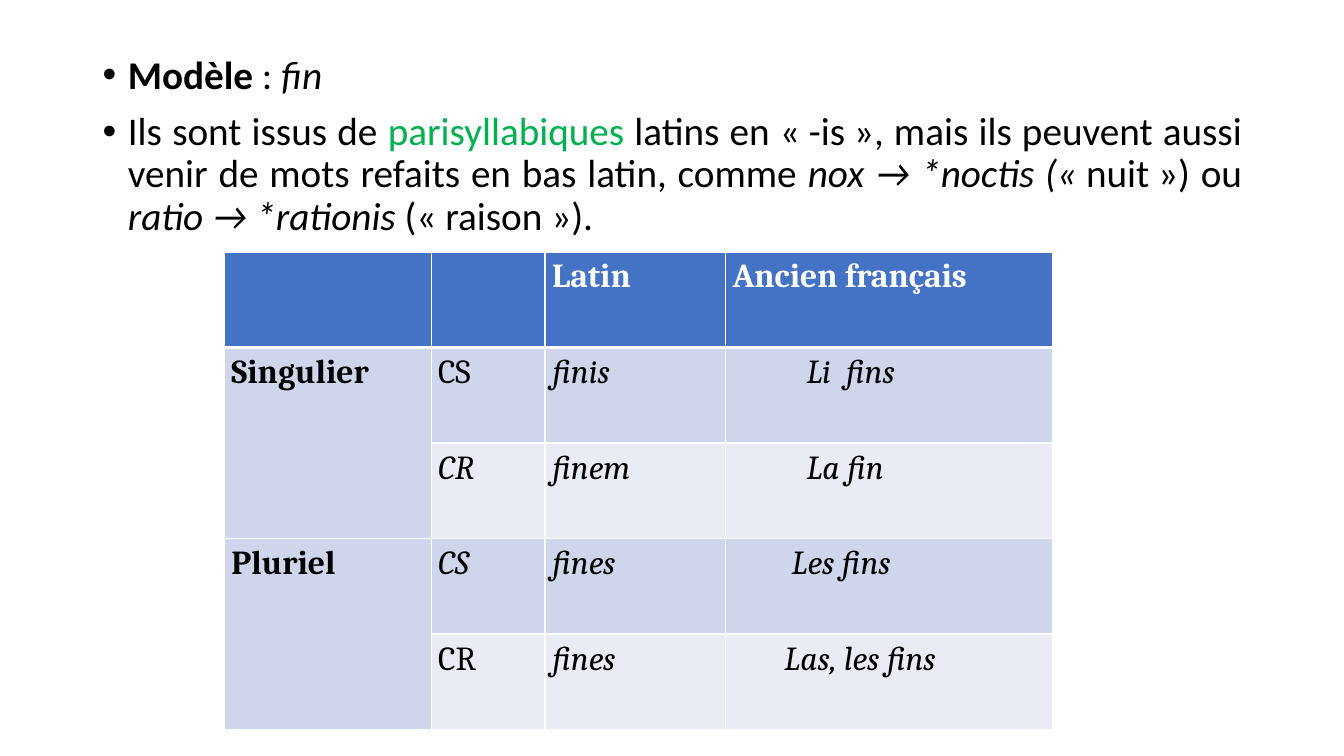
from dataclasses import dataclass

from lxml.etree import SubElement
from pptx import Presentation
from pptx.dml.color import RGBColor
from pptx.enum.text import PP_ALIGN
from pptx.oxml.ns import qn
from pptx.util import Emu, Inches, Pt

BLACK = RGBColor(0x00, 0x00, 0x00)
WHITE = RGBColor(0xFF, 0xFF, 0xFF)
GREEN = RGBColor(0x00, 0xB0, 0x50)
HEADER_BLUE = RGBColor(0x44, 0x72, 0xC4)
BAND_DARK = RGBColor(0xCF, 0xD5, 0xEA)
BAND_LIGHT = RGBColor(0xE9, 0xEB, 0xF5)

SLIDE_WIDTH, SLIDE_HEIGHT = Inches(13.333), Inches(7.5)
COLUMN_SHARES = (15.38, 8.48, 13.43, 24.31)
ROW_SHARE = 12.64


@dataclass(frozen=True)
class Phrase:
    text: str
    bold: bool = False
    italic: bool = False
    color: RGBColor = BLACK


@dataclass(frozen=True)
class Entry:
    text: str
    bold: bool = False
    italic: bool = False
    indent: float = 0
    rows: int = 1


MODEL = (Phrase("Modèle", bold=True), Phrase("\u00a0: "), Phrase("fin", italic=True))
ORIGIN = (
    Phrase("Ils sont issus de "),
    Phrase("parisyllabiques", color=GREEN),
    Phrase(" latins en «\u00a0-is\u00a0», mais ils peuvent aussi venir de mots "
           "refaits en bas latin, comme "),
    Phrase("nox → *noctis («\u00a0", italic=True),
    Phrase("nuit\u00a0») ou "),
    Phrase("ratio → *rationis", italic=True),
    Phrase(" («\u00a0raison\u00a0»)."),
)
DECLENSION = (
    (None, None, Entry("Latin", bold=True), Entry("Ancien français", bold=True)),
    (Entry("Singulier", bold=True, rows=2), Entry("CS"),
     Entry("finis", italic=True), Entry("Li  fins", italic=True, indent=5.5)),
    (None, Entry("CR", italic=True),
     Entry("finem", italic=True), Entry("La fin", italic=True, indent=5.5)),
    (Entry("Pluriel", bold=True, rows=2), Entry("CS", italic=True),
     Entry("fines", italic=True), Entry("Les fins", italic=True, indent=4.4)),
    (None, Entry("CR"),
     Entry("fines", italic=True), Entry("Las, les fins", italic=True, indent=3.85)),
)


def across(percent: float) -> Emu:
    return Emu(round(SLIDE_WIDTH * percent / 100))


def down(percent: float) -> Emu:
    return Emu(round(SLIDE_HEIGHT * percent / 100))


def add_bullet(paragraph, phrases: tuple[Phrase, ...], align: PP_ALIGN) -> None:
    paragraph.alignment = align
    paragraph.line_spacing = 0.9
    paragraph.space_before = Pt(10)
    paragraph.font.name = "Calibri"
    paragraph.font.size = Pt(28)
    properties = paragraph._p.get_or_add_pPr()
    properties.set("marL", str(Inches(0.25)))
    properties.set("indent", str(-Inches(0.25)))
    bullet_font = SubElement(properties, qn("a:buFont"), typeface="Arial")
    bullet_font.addnext(SubElement(properties, qn("a:buChar"), char="•"))
    # The schema puts bullets ahead of the default run properties.
    properties.append(properties.find(qn("a:defRPr")))
    for phrase in phrases:
        run = paragraph.add_run()
        run.text = phrase.text
        run.font.bold = phrase.bold
        run.font.italic = phrase.italic
        run.font.color.rgb = phrase.color


def add_rules(slide) -> None:
    frame = slide.shapes.add_textbox(
        across(6.9), down(6.67), across(86.25), down(26)).text_frame
    frame.word_wrap = True
    add_bullet(frame.paragraphs[0], MODEL, PP_ALIGN.LEFT)
    add_bullet(frame.add_paragraph(), ORIGIN, PP_ALIGN.JUSTIFY)


def style_cell(cell, fill: RGBColor, bottom: float, top: float) -> None:
    """Draw the white borders, with widths in points, then the fill."""
    properties = cell._tc.get_or_add_tcPr()
    for side, width in (("lnL", 1), ("lnR", 1), ("lnT", top), ("lnB", bottom)):
        border = SubElement(properties, qn(f"a:{side}"), w=str(Pt(width)))
        SubElement(SubElement(border, qn("a:solidFill")), qn("a:srgbClr"), val=str(WHITE))
    cell.fill.solid()
    cell.fill.fore_color.rgb = fill


def write_entry(cell, entry: Entry, color: RGBColor) -> None:
    cell.margin_left = cell.margin_right = Inches(0.07)
    cell.margin_top = cell.margin_bottom = 0
    cell.text = entry.text
    paragraph = cell.text_frame.paragraphs[0]
    paragraph.alignment = PP_ALIGN.JUSTIFY
    paragraph.line_spacing = 1.15
    paragraph._p.get_or_add_pPr().set("marL", str(across(entry.indent)))
    font = paragraph.font
    font.name, font.size = "Cambria", Pt(24)
    font.bold, font.italic = entry.bold, entry.italic
    font.color.rgb = color


def add_declension(slide) -> None:
    row_count = len(DECLENSION)
    table = slide.shapes.add_table(
        row_count, len(COLUMN_SHARES), across(16.7), down(33.33),
        across(sum(COLUMN_SHARES)), down(ROW_SHARE * row_count)).table
    table.horz_banding = False
    for column, share in zip(table.columns, COLUMN_SHARES):
        column.width = across(share)
    for r, entries in enumerate(DECLENSION):
        table.rows[r].height = down(ROW_SHARE)
        band = BAND_DARK if r % 2 else BAND_LIGHT
        for c, entry in enumerate(entries):
            cell = table.cell(r, c)
            fill = HEADER_BLUE if r == 0 else BAND_DARK if c == 0 else band
            style_cell(cell, fill, bottom=3 if r == 0 else 1, top=3 if r == 1 else 1)
            if entry is None:
                continue
            write_entry(cell, entry, WHITE if r == 0 else BLACK)
            if entry.rows > 1:
                cell.merge(table.cell(r + entry.rows - 1, c))


def main() -> None:
    presentation = Presentation()
    presentation.slide_width, presentation.slide_height = SLIDE_WIDTH, SLIDE_HEIGHT
    slide = presentation.slides.add_slide(presentation.slide_layouts[6])
    add_rules(slide)
    add_declension(slide)
    presentation.save("out.pptx")


if __name__ == "__main__":
    main()
